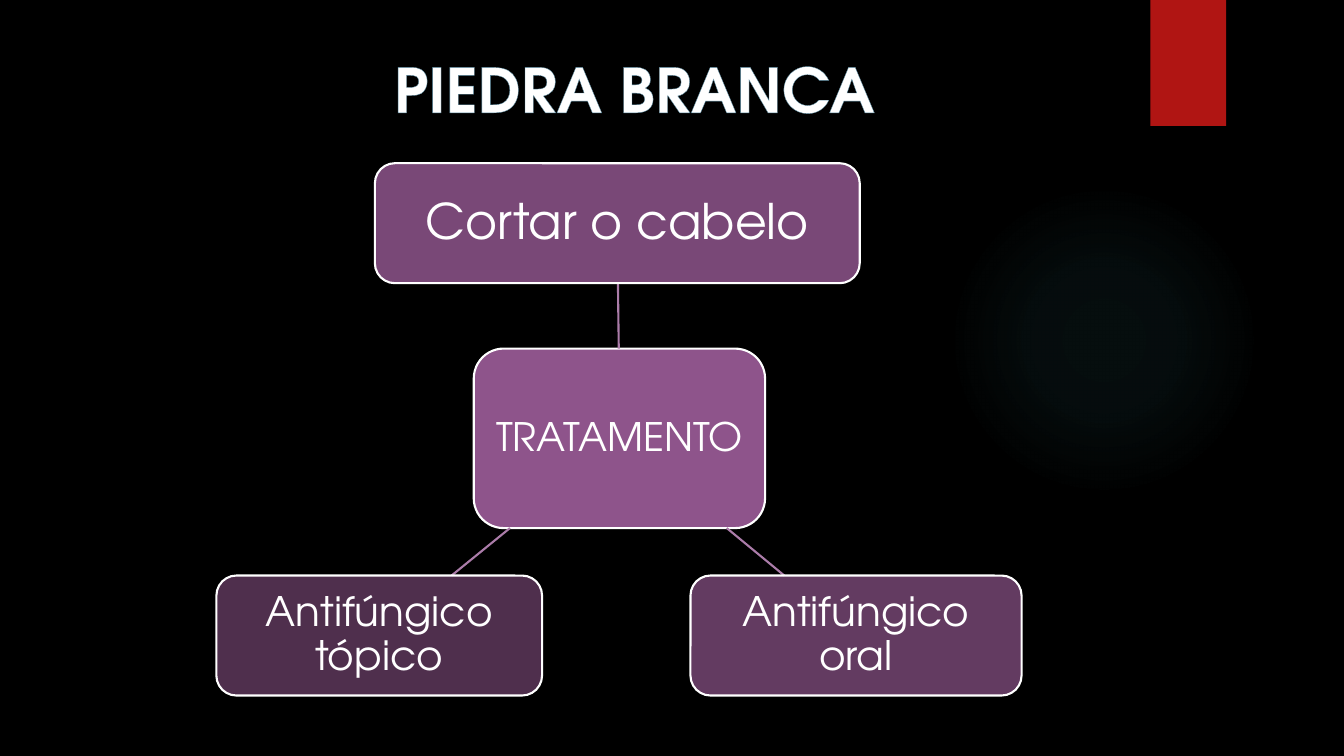
from dataclasses import dataclass

from lxml import etree
from pptx import Presentation
from pptx.dml.color import RGBColor
from pptx.enum import shapes, text
from pptx.oxml import ns, parse_xml
from pptx.util import Pt


@dataclass(frozen=True)
class Theme:
    font: str = "TeX Gyre Adventor"
    background: str = "000000"
    ink: str = "FFFFFF"
    title_outline: str = "54849A"
    ribbon: str = "B01513"
    glow: str = "50B9C1"
    box: str = "9E5E9B"
    link: str = "AB7CA9"
    title_size: float = 44
    root_size: float = 28
    main_size: float = 35
    leaf_size: float = 29
    line_width: float = 1.5


def rgb(value):
    return RGBColor.from_string(value)


class SlideBuilder:
    def __init__(self, prs, theme):
        self.theme = theme
        self.s = prs.slides.add_slide(prs.slide_layouts[6])
        self.s.background.fill.solid()
        self.s.background.fill.fore_color.rgb = rgb(theme.background)

    def shape(self, kind, bounds, color):
        sp = self.s.shapes.add_shape(kind, *map(Pt, bounds))
        sp.shadow.inherit = False
        sp.fill.solid()
        sp.fill.fore_color.rgb = rgb(color)
        sp.line.fill.background()
        return sp

    def label(self, tf, words, size, bold=False):
        tf.word_wrap = True
        p = tf.paragraphs[0]
        p.alignment = text.PP_ALIGN.CENTER
        r = p.add_run()
        r.text = words
        p.font.name = self.theme.font
        p.font.size = Pt(size)
        p.font.bold = bold
        p.font.color.rgb = rgb(self.theme.ink)
        return p, r

    def glow(self, bounds):
        """Draw a circle that fades out from its centre."""
        sp = self.shape(shapes.MSO_SHAPE.OVAL, bounds, self.theme.glow)
        stops = "".join(
            f'<a:gs pos="{pos * 1000}"><a:srgbClr val="{self.theme.glow}">'
            f'<a:alpha val="{alpha * 1000}"/></a:srgbClr></a:gs>'
            for pos, alpha in ((0, 7), (36, 6), (69, 0)))
        gradient = parse_xml(
            f'<a:gradFill {ns.nsdecls("a")}><a:gsLst>{stops}</a:gsLst>'
            '<a:path path="circle"><a:fillToRect l="50000" t="50000" '
            'r="50000" b="50000"/></a:path></a:gradFill>')
        spPr = sp.element.spPr
        spPr.replace(spPr.find(ns.qn("a:solidFill")), gradient)

    def title(self, bounds, words):
        tf = self.s.shapes.add_textbox(*map(Pt, bounds)).text_frame
        _, r = self.label(tf, words, self.theme.title_size, bold=True)
        outline = parse_xml(
            f'<a:ln {ns.nsdecls("a")} w="{Pt(0.8)}"><a:solidFill>'
            f'<a:srgbClr val="{self.theme.title_outline}"/></a:solidFill></a:ln>')
        r.font.color.rgb = rgb(self.theme.ink)
        r._r.get_or_add_rPr().insert(0, outline)

    def box(self, bounds, words, size, opacity, margin=6):
        sp = self.shape(shapes.MSO_SHAPE.ROUNDED_RECTANGLE, bounds, self.theme.box)
        color = sp.element.spPr.find(ns.qn("a:solidFill"))[0]
        etree.SubElement(color, ns.qn("a:alpha"), val=str(opacity * 1000))
        sp.line.color.rgb = rgb(self.theme.ink)
        sp.line.width = Pt(self.theme.line_width)
        tf = sp.text_frame
        tf.vertical_anchor = text.MSO_ANCHOR.MIDDLE
        tf.margin_left = tf.margin_right = Pt(margin)
        tf.margin_top = tf.margin_bottom = Pt(margin)
        p, _ = self.label(tf, words, size)
        p.line_spacing = 0.9

    def link(self, *ends):
        line = self.s.shapes.add_connector(
            shapes.MSO_CONNECTOR.STRAIGHT, *map(Pt, ends))
        line.line.color.rgb = rgb(self.theme.link)
        line.line.width = Pt(self.theme.line_width)
        etree.SubElement(line.element.spPr, ns.qn("a:effectLst"))


def main():
    prs = Presentation()
    prs.slide_width, prs.slide_height = Pt(960), Pt(540)
    theme = Theme()
    b = SlideBuilder(prs, theme)

    b.glow((677.5, 131.8, 221.8, 221.8))
    b.shape(shapes.MSO_SHAPE.RECTANGLE, (821.8, 0, 54, 90), theme.ribbon)
    b.title((248.4, 33.1, 409.7, 60.5), "PIEDRA BRANCA")

    root_top, root_height = 249, 128.2
    root_bottom = root_top + root_height
    branch_height, main_top, leaf_top = 85.7, 116.6, 411.1
    b.box((338.4, root_top, 208.1, root_height), "TRATAMENTO", theme.root_size, 90)
    b.link(442, root_top, 441.4, main_top + branch_height)
    b.box((267.8, main_top, 346.3, branch_height),
          "Cortar o cabelo", theme.main_size, 77, margin=7)

    leaves = (
        ("Antifúngico oral", 493.2, 236.5, 63, 519.1, 560.2),
        ("Antifúngico tópico", 154.6, 232.6, 50, 364.3, 322.6),
    )
    for words, left, width, opacity, start, end in leaves:
        b.link(start, root_bottom, end, leaf_top)
        b.box((left, leaf_top, width, branch_height), words, theme.leaf_size, opacity)

    prs.save("out.pptx")


if __name__ == "__main__":
    main()
